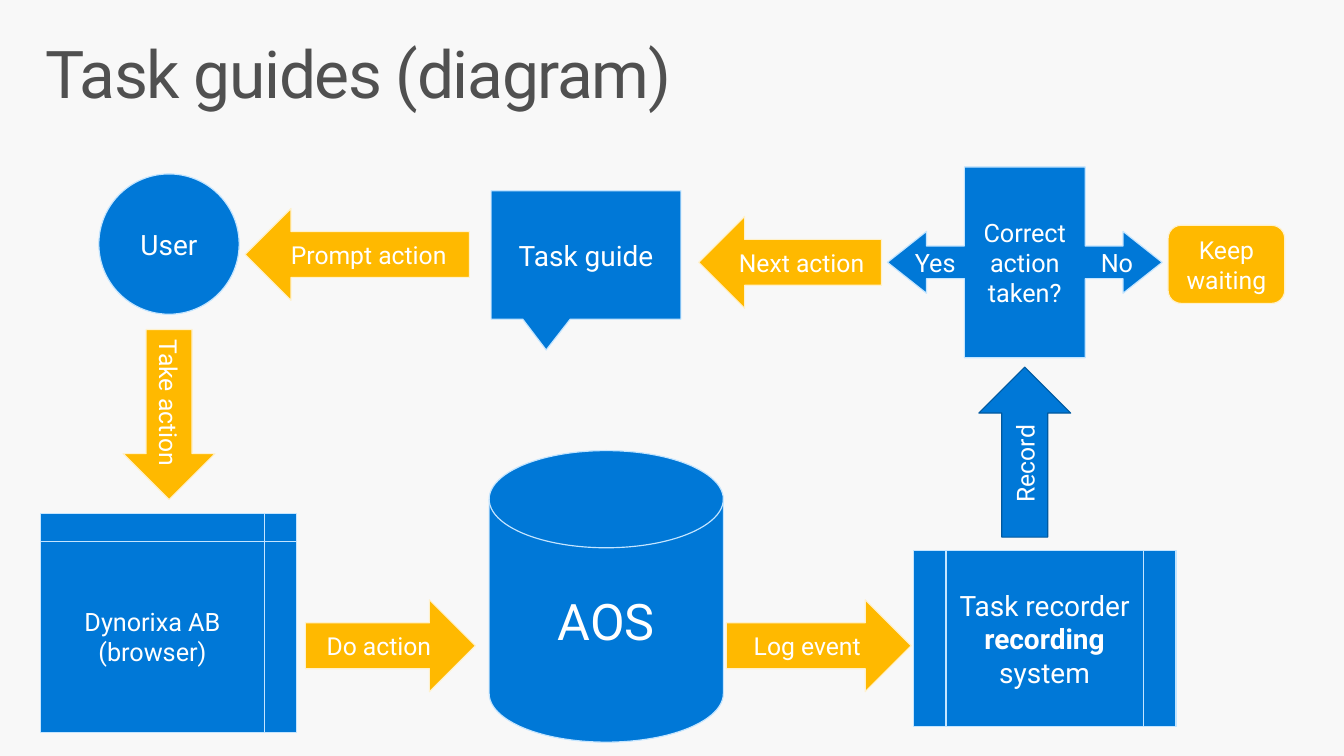
"""Builds the task guides diagram slide."""
from pptx import Presentation
from pptx.dml.color import RGBColor
from pptx.enum.shapes import MSO_SHAPE
from pptx.enum.text import MSO_ANCHOR, PP_ALIGN
from pptx.util import Inches, Pt

BACKGROUND = RGBColor(0xF8, 0xF8, 0xF8)
TITLE_GREY = RGBColor(0x50, 0x50, 0x50)
WHITE = RGBColor(0xFF, 0xFF, 0xFF)
BLUE = RGBColor(0x00, 0x78, 0xD7)
PALE_BLUE = RGBColor(0xC4, 0xE5, 0xFF)
DARK_BLUE = RGBColor(0x00, 0x59, 0x9F)
AMBER = RGBColor(0xFF, 0xB9, 0x00)
PALE_AMBER = RGBColor(0xFF, 0xF1, 0xCC)
FONT = "Roboto"
ARROW_HEIGHT = 0.93


def style_font(para, size, color):
    """Set the typeface, size and colour of a paragraph."""
    para.font.name = FONT
    para.font.size = Pt(size)
    para.font.color.rgb = color


def add_label(page, box, text, size, color=WHITE):
    """Place plain text in a box and return its frame."""
    label = page.shapes.add_textbox(*map(Inches, box))
    frame = label.text_frame
    frame.word_wrap = True
    frame.text = text
    style_font(frame.paragraphs[0], size, color)
    return frame


def add_node(page, kind, box, spans, size, fill=BLUE, line=PALE_BLUE):
    """Draw a filled shape with centred text given as (words, bold) spans."""
    node = page.shapes.add_shape(kind, *map(Inches, box))
    node.shadow.inherit = False
    node.fill.solid()
    node.fill.fore_color.rgb = fill
    node.line.color.rgb = line
    node.line.width = Pt(0.85)
    frame = node.text_frame
    frame.word_wrap = True
    frame.vertical_anchor = MSO_ANCHOR.MIDDLE
    para = frame.paragraphs[0]
    para.alignment = PP_ALIGN.CENTER
    style_font(para, size, WHITE)
    for words, bold in spans:
        span = para.add_run()
        span.text = words
        if bold:
            span.font.bold = True
    return node


def add_arrow(page, left, top, width, text, kind=MSO_SHAPE.RIGHT_ARROW,
              fill=AMBER, line=PALE_AMBER):
    """Draw a labelled block arrow of the common height."""
    box = (left, top, width, ARROW_HEIGHT)
    return add_node(page, kind, box, [(text, False)], 18, fill, line)


def draw_title(page, box):
    """Write the slide title."""
    frame = add_label(page, box, "Task guides (diagram)", 48, TITLE_GREY)
    frame.margin_left = frame.margin_right = Inches(0.16)
    frame.margin_top = frame.margin_bottom = Inches(0.1)
    para = frame.paragraphs[0]
    para.line_spacing = 0.9
    para.runs[0].font._element.set("spc", "-100")


def draw_guide_row(page, left, top):
    """Draw the upper row, from the decision back to the user."""
    add_node(page, MSO_SHAPE.FLOWCHART_CONNECTOR,
             (left, top + 0.07, 1.42, 1.42), [("User", False)], 20.4)
    guide = add_node(page, MSO_SHAPE.RECTANGULAR_CALLOUT,
                     (left + 3.97, top + 0.24, 1.92, 1.3),
                     [("Task guide", False)], 20.4)
    guide.adjustments[0], guide.adjustments[1] = -0.21, 0.74
    for offset, drop, width, text in [(1.48, 0.42, 2.27, "Prompt action"),
                                      (6.07, 0.5, 1.85, "Next action")]:
        add_arrow(page, left + offset, top + drop, width, text,
                  MSO_SHAPE.LEFT_ARROW)
    decision = add_node(page, MSO_SHAPE.LEFT_RIGHT_ARROW_CALLOUT,
                        (left + 7.98, top, 2.78, 1.93),
                        [("Correct action taken?", False)], 18.4)
    for index, value in enumerate((0.171, 0.162, 0.205, 0.44)):
        decision.adjustments[index] = value
    for offset, width, text in [(8.16, 0.67, "Yes"), (10.04, 0.55, "No")]:
        add_label(page, (left + offset, top + 0.76, width, 0.41), text, 18.4)
    add_node(page, MSO_SHAPE.ROUNDED_RECTANGLE,
             (left + 10.82, top + 0.59, 1.18, 0.79),
             [("Keep waiting", False)], 18, AMBER, PALE_AMBER)


def draw_system_row(page, left, top):
    """Draw the lower row, from the browser to the recorder."""
    browser = add_node(page, MSO_SHAPE.FLOWCHART_INTERNAL_STORAGE,
                       (left, top + 0.64, 2.59, 2.21),
                       [("Dynorixa AB (browser)", False)], 18.4)
    browser._element.spPr.xfrm.set("flipH", "1")
    add_node(page, MSO_SHAPE.FLOWCHART_MAGNETIC_DISK,
             (left + 4.54, top, 2.37, 2.95), [("AOS", False)], 36.7)
    add_node(page, MSO_SHAPE.FLOWCHART_PREDEFINED_PROCESS,
             (left + 8.83, top + 1.01, 2.66, 1.78),
             [("Task recorder ", False), ("recording", True),
              (" system", False)], 20.4)
    for offset, width, text in [(2.68, 1.72, "Do action"),
                                (6.94, 1.87, "Log event")]:
        add_arrow(page, left + offset, top + 1.51, width, text)


def draw_row_links(page, left, top):
    """Draw the two upright arrows between the rows."""
    take = add_arrow(page, left, top, 1.72, "Take action")
    take.rotation = 90
    record = add_arrow(page, left + 8.66, top + 0.38, 1.72, "Record",
                       fill=BLUE, line=DARK_BLUE)
    record.rotation = 270


def main():
    """Build and save the deck."""
    deck = Presentation()
    deck.slide_width, deck.slide_height = Inches(13.6), Inches(7.65)
    page = deck.slides.add_slide(deck.slide_layouts[6])
    page.background.fill.solid()
    page.background.fill.fore_color.rgb = BACKGROUND
    draw_title(page, (0.3, 0.32, 13, 1))
    draw_guide_row(page, 1, 1.69)
    draw_system_row(page, 0.41, 4.56)
    draw_row_links(page, 0.85, 3.73)
    deck.save("out.pptx")


if __name__ == "__main__":
    main()
